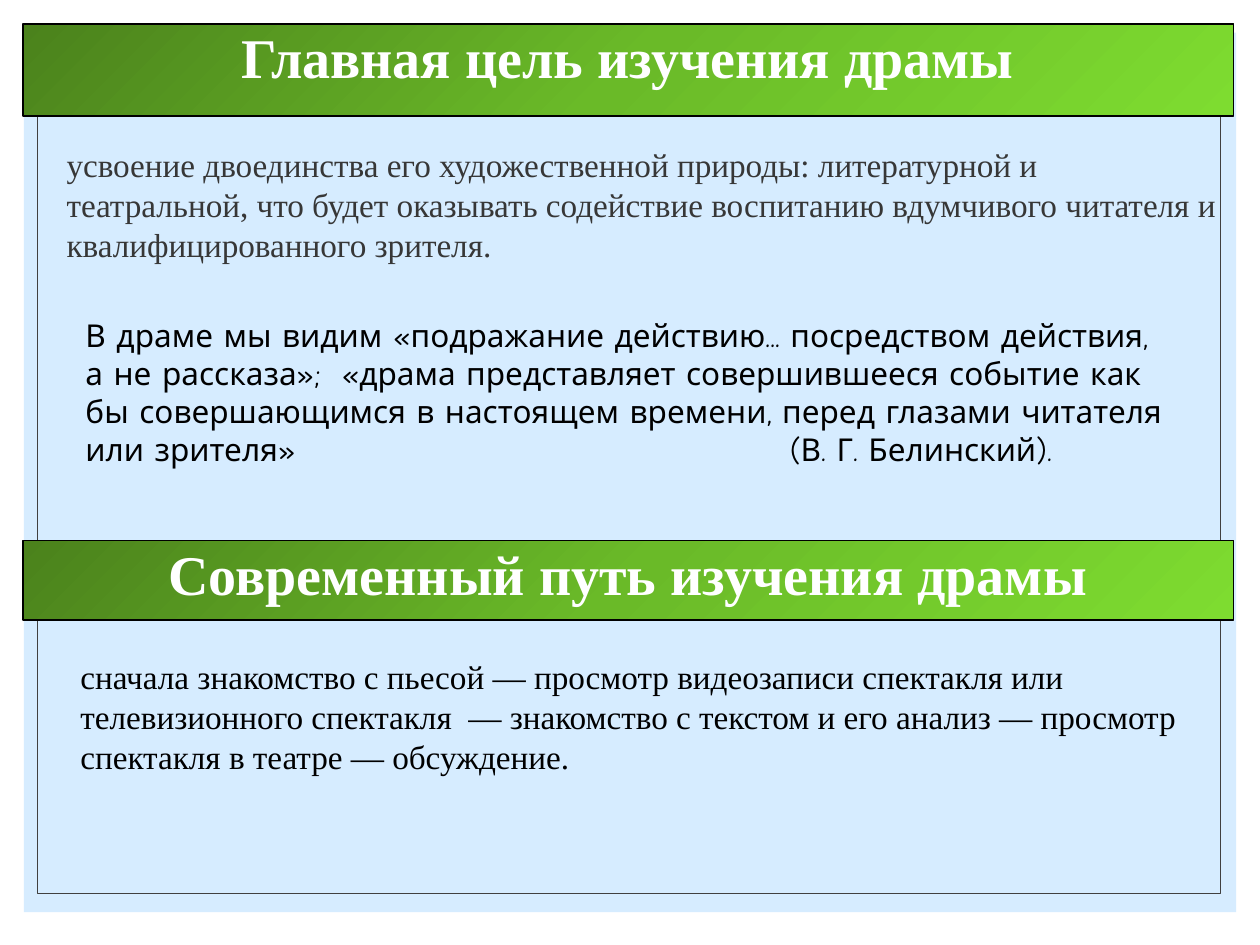
from copy import deepcopy

from lxml.etree import SubElement
from pptx import Presentation
from pptx.dml.color import RGBColor
from pptx.enum.shapes import MSO_SHAPE
from pptx.enum.text import MSO_ANCHOR, PP_ALIGN
from pptx.oxml.ns import qn
from pptx.util import Inches, Pt

COLORS = {
    "panel": "D6ECFF",
    "frame": "404040",
    "goal": "373737",
    "black": "000000",
    "white": "FFFFFF",
    "green_dark": "4B821C",
    "green_mid": "6ABA28",
    "green_light": "7EDC30",
}
SERIF = "Times New Roman"


def add_rect(left, top, width, height):
    rect = slide.shapes.add_shape(
        MSO_SHAPE.RECTANGLE, Inches(left), Inches(top), Inches(width), Inches(height)
    )
    rect.shadow.inherit = False
    return rect


def write(frame, text, font_name, size, color):
    frame.word_wrap = True
    frame.vertical_anchor = MSO_ANCHOR.TOP
    frame.text = text
    paragraph = frame.paragraphs[0]
    font = paragraph.runs[0].font
    font.name = font_name
    font.size = Pt(size)
    font.color.rgb = RGBColor.from_string(COLORS[color])
    return paragraph


prs = Presentation()
prs.slide_width = Inches(10)
prs.slide_height = Inches(7.5)
slide = prs.slides.add_slide(prs.slide_layouts[6])

# Background panel and its thin frame
panel = add_rect(0.19, 0.26, 9.62, 6.98)
panel.fill.solid()
panel.fill.fore_color.rgb = RGBColor.from_string(COLORS["panel"])
panel.line.fill.background()

frame = add_rect(0.3, 0.41, 9.39, 6.68)
frame.fill.background()
frame.line.color.rgb = RGBColor.from_string(COLORS["frame"])
frame.line.width = Pt(0.5)

# Green heading bands
headings = [
    ("Главная цель изучения драмы", 0.19, 0.73),
    ("Современный путь изучения драмы", 4.29, 0.63),
]
for heading, top, height in headings:
    band = add_rect(0.18, top, 9.61, height)
    band.line.color.rgb = RGBColor.from_string(COLORS["black"])
    band.line.width = Pt(1)

    # Three stops, running from top left to bottom right
    band.fill.gradient()
    band.fill.gradient_angle = 315
    stop_list = band.fill._fill._gradFill.find(qn("a:gsLst"))
    stop_list.insert(1, deepcopy(stop_list[0]))
    greens = ["green_dark", "green_mid", "green_light"]
    for index, (stop, green) in enumerate(zip(band.fill.gradient_stops, greens)):
        stop.position = index / 2
        stop.color.rgb = RGBColor.from_string(COLORS[green])

    title = write(band.text_frame, heading, SERIF, 32, "white")
    title.alignment = PP_ALIGN.CENTER
    title.line_spacing = 0.9
    title.runs[0].font.bold = True

# Body passages: text, left, top, width, height, font, size, colour, space before
passages = [
    (
        "усвоение двоединства его художественной природы: литературной и "
        "театральной, что будет оказывать содействие воспитанию вдумчивого "
        "читателя и квалифицированного зрителя.",
        0.43, 1.1, 9.36, 1.17, SERIF, 19, "goal", 9,
    ),
    (
        "В драме мы видим «подражание действию... посредством действия, "
        "а не рассказа»;  «драма представляет совершившееся событие как бы "
        "совершающимся в настоящем времени, перед глазами читателя или "
        "зрителя»\t(В. Г. Белинский).",
        0.58, 2.46, 8.82, 1.62, "Comic Neue", 18, "black", 0,
    ),
    (
        "сначала знакомство с пьесой — просмотр видеозаписи спектакля или "
        "телевизионного спектакля  — знакомство с текстом и его анализ — "
        "просмотр спектакля в театре — обсуждение.",
        0.54, 5.16, 8.9, 1.06, SERIF, 19, "black", 0,
    ),
]
for text, left, top, width, height, font_name, size, color, space in passages:
    passage = slide.shapes.add_textbox(
        Inches(left), Inches(top), Inches(width), Inches(height)
    )
    paragraph = write(passage.text_frame, text, font_name, size, color)
    paragraph.space_before = Pt(space)

    # The quotation's author stands at a tab stop
    if "\t" in text:
        tabs = SubElement(paragraph._p.get_or_add_pPr(), qn("a:tabLst"))
        SubElement(tabs, qn("a:tab"), pos=str(Inches(5.59)), algn="l")

prs.save("out.pptx")
